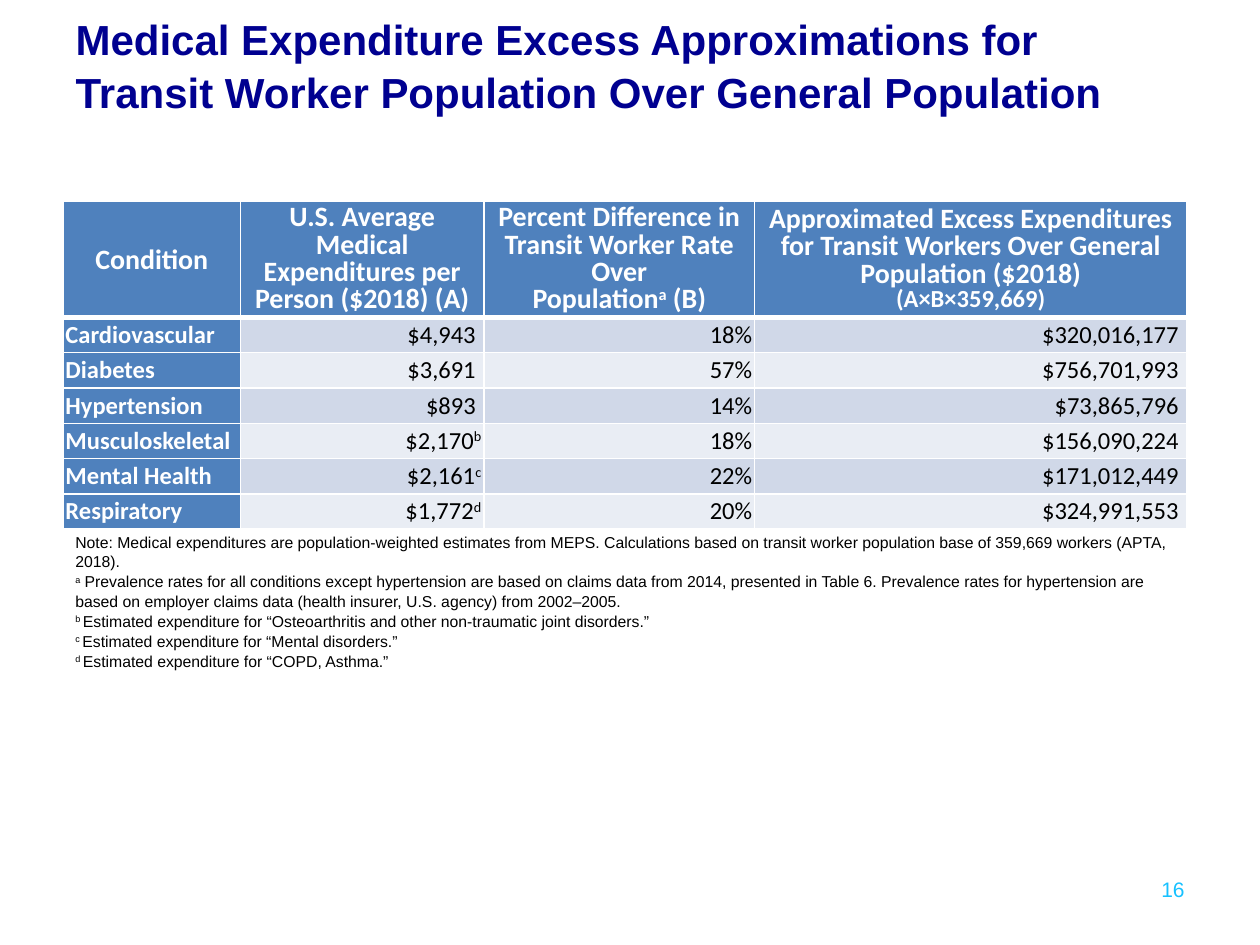
from pptx import Presentation
from pptx.dml.color import RGBColor
from pptx.enum.text import MSO_ANCHOR, MSO_AUTO_SIZE, PP_ALIGN
from pptx.oxml import parse_xml
from pptx.oxml.ns import nsdecls
from pptx.util import Inches, Pt


def add_text(p, text, size, font, color, bold=False):
    for i, part in enumerate(text.split("^")):
        if not part:
            continue
        r = p.add_run()
        r.text = part
        r.font.size = Pt(size)
        r.font.name = font
        r.font.bold = bold
        r.font.color.rgb = RGBColor.from_string(color)
        if i % 2:
            r._r.get_or_add_rPr().set("baseline", "30000")


def add_border(cell, side, width):
    cell._tc.get_or_add_tcPr().append(parse_xml(
        f'<a:ln{side} {nsdecls("a")} w="{Pt(width)}"><a:solidFill>'
        f'<a:srgbClr val="FFFFFF"/></a:solidFill></a:ln{side}>'))


prs = Presentation()
prs.slide_width, prs.slide_height = Inches(10), Inches(7.5)
s = prs.slides.add_slide(prs.slide_layouts[5])

title = s.shapes.title
title.left, title.top = Inches(0.5), Inches(0)
title.width, title.height = Inches(8.56), Inches(1.01)
tf = title.text_frame
tf.word_wrap = True
tf.auto_size = MSO_AUTO_SIZE.NONE
tf.vertical_anchor = MSO_ANCHOR.MIDDLE
p = tf.paragraphs[0]
p.alignment = PP_ALIGN.LEFT
p.line_spacing = 1.05
add_text(p, "Medical Expenditure Excess Approximations for Transit Worker "
            "Population Over General Population", 24, "Arial", "000090", True)

rows = [
    ["Condition",
     "U.S. Average Medical Expenditures per Person ($2018) (A)",
     "Percent Difference in Transit Worker Rate Over\nPopulation^a^ (B)",
     "Approximated Excess Expenditures for Transit Workers Over General "
     "Population ($2018)\n(A×B×359,669)"],
    ["Cardiovascular", "$4,943 ", "18%", "$320,016,177 "],
    ["Diabetes", "$3,691 ", "57%", "$756,701,993 "],
    ["Hypertension", "$893 ", "14%", "$73,865,796 "],
    ["Musculoskeletal", "$2,170^b", "18%", "$156,090,224 "],
    ["Mental Health", "$2,161^c", "22%", "$171,012,449 "],
    ["Respiratory", "$1,772^d", "20%", "$324,991,553 "],
]
table = s.shapes.add_table(len(rows), 4, Inches(0.5), Inches(1.6),
                           Inches(8.92), Inches(2.6)).table
table.horz_banding = False
for col, width in zip(table.columns, [1.41, 1.93, 2.15, 3.43]):
    col.width = Inches(width)
for i, row in enumerate(rows):
    table.rows[i].height = Inches(0.28 if i else 0.92)
    for j, text in enumerate(row):
        cell = table.cell(i, j)
        cell.margin_left = cell.margin_right = Inches(0.02)
        cell.margin_top = cell.margin_bottom = Inches(0)
        cell.vertical_anchor = MSO_ANCHOR.MIDDLE
        for side in "LRTB":
            under_header = (i, side) in [(0, "B"), (1, "T")]
            add_border(cell, side, 3 if under_header else 1)
        heading = i == 0 or j == 0
        fill = "4F81BD" if heading else "D0D8E8" if i % 2 else "E9EDF4"
        cell.fill.solid()
        cell.fill.fore_color.rgb = RGBColor.from_string(fill)
        tf = cell.text_frame
        for k, line in enumerate(text.split("\n")):
            p = tf.add_paragraph() if k else tf.paragraphs[0]
            if i == 0:
                p.alignment = PP_ALIGN.CENTER
                if j:
                    p.line_spacing = 0.8
            else:
                p.alignment = PP_ALIGN.RIGHT if j else PP_ALIGN.LEFT
            size = 14 if i or line.startswith("(A×") else 16
            add_text(p, line, size, "Calibri",
                     "FFFFFF" if heading else "000000", heading)

notes = [
    "Note: Medical expenditures are population-weighted estimates from MEPS. "
    "Calculations based on transit worker population base of 359,669 workers (APTA, 2018).",
    "^a^ Prevalence rates for all conditions except hypertension are based on claims data "
    "from 2014, presented in Table 6. Prevalence rates for hypertension are based on "
    "employer claims data (health insurer, U.S. agency) from 2002–2005.",
    "^b ^Estimated expenditure for “Osteoarthritis and other non-traumatic joint disorders.”",
    "^c ^Estimated expenditure for “Mental disorders.”",
    "^d ^Estimated expenditure for “COPD, Asthma.”",
]
boxes = [
    ((8.78, 6.92, 0.72, 0.27), ["16"], 12, "17C1FF", PP_ALIGN.RIGHT),
    ((0.5, 4.19, 8.93, 1.16), notes, 9, "000000", PP_ALIGN.LEFT),
]
for place, lines, size, color, align in boxes:
    tf = s.shapes.add_textbox(*map(Inches, place)).text_frame
    tf.word_wrap = True
    tf.vertical_anchor = MSO_ANCHOR.MIDDLE
    for k, line in enumerate(lines):
        p = tf.add_paragraph() if k else tf.paragraphs[0]
        p.alignment = align
        p.line_spacing = 1.05
        add_text(p, line, size, "Arial", color)

prs.save("out.pptx")
